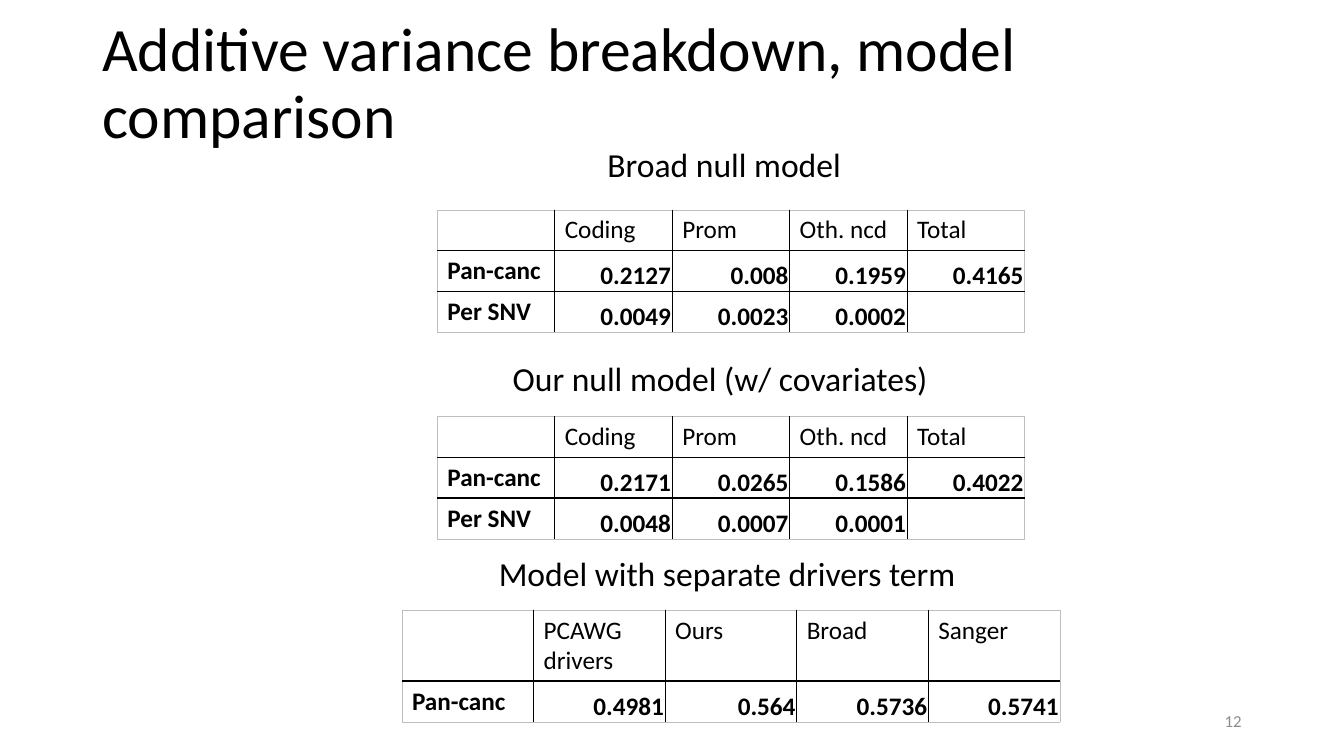
from pptx import Presentation
from pptx.dml.color import RGBColor
from pptx.enum.text import MSO_ANCHOR, PP_ALIGN
from pptx.oxml.ns import qn
from pptx.util import Cm, Pt
from lxml.etree import SubElement

BLACK = RGBColor(0, 0, 0)
WHITE = RGBColor(255, 255, 255)
GREY = RGBColor(0x8C, 0x8C, 0x8C)
EDGE = RGBColor(0xBF, 0xBF, 0xBF)
FONT = "Calibri"

HEAD = ["", "Coding", "Prom", "Oth. ncd", "Total"]
BROAD = [
    HEAD,
    ["Pan-canc", "0.2127", "0.008", "0.1959", "0.4165"],
    ["Per SNV", "0.0049", "0.0023", "0.0002", ""],
]
OURS = [
    HEAD,
    ["Pan-canc", "0.2171", "0.0265", "0.1586", "0.4022"],
    ["Per SNV", "0.0048", "0.0007", "0.0001", ""],
]
DRIVERS = [
    ["", "PCAWG drivers", "Ours", "Broad", "Sanger"],
    ["Pan-canc", "0.4981", "0.564", "0.5736", "0.5741"],
]
ROW = 1.03
TALL = 1.79


def add_run(para, text, size, color=BLACK, bold=False):
    run = para.add_run()
    run.text = text
    font = run.font
    font.name, font.size, font.bold = FONT, Pt(size), bold
    font.color.rgb = color


def add_text(slide, box, text, size, color=BLACK, anchor=MSO_ANCHOR.TOP,
             align=PP_ALIGN.LEFT, space=1.0):
    frame = slide.shapes.add_textbox(*map(Cm, box)).text_frame
    frame.word_wrap = True
    frame.vertical_anchor = anchor
    para = frame.paragraphs[0]
    para.alignment = align
    para.line_spacing = space
    add_run(para, text, size, color)


def add_edge(cell, side, outer):
    """Draw one side of a cell: grey on the rim, black inside."""
    props = cell._tc.get_or_add_tcPr()
    line = SubElement(props, qn("a:ln" + side), w=str(Pt(0.5 if outer else 1)))
    fill = SubElement(line, qn("a:solidFill"))
    SubElement(fill, qn("a:srgbClr"), val=str(EDGE if outer else BLACK))


def add_grid(slide, box, rows, heights):
    """Place a table of equal columns in a box of left, top, width."""
    left, top, width = box
    high, wide = len(rows), len(rows[0])
    grid = slide.shapes.add_table(
        high, wide, Cm(left), Cm(top), Cm(width), Cm(sum(heights))).table
    grid.first_row = grid.horz_banding = False
    for col in grid.columns:
        col.width = Cm(width / wide)
    for r, row in enumerate(rows):
        grid.rows[r].height = Cm(heights[r])
        for c, text in enumerate(row):
            cell = grid.cell(r, c)
            rims = {"L": c == 0, "R": c == wide - 1,
                    "T": r == 0, "B": r == high - 1}
            for side, outer in rims.items():
                add_edge(cell, side, outer)
            cell.fill.solid()
            cell.fill.fore_color.rgb = WHITE
            if not text:
                continue
            para = cell.text_frame.paragraphs[0]
            if r and c:
                cell.vertical_anchor = MSO_ANCHOR.BOTTOM
                cell.margin_left = cell.margin_right = Cm(0.03)
                cell.margin_top, cell.margin_bottom = Cm(0.03), 0
                para.alignment = PP_ALIGN.RIGHT
            add_run(para, text, 18, bold=r > 0)


def add_model(slide, label, spot, box, rows, heights):
    """Place a caption at its spot and a table in its box."""
    add_text(slide, (*spot, 1.27), label, 24)
    add_grid(slide, box, rows, heights)


def main():
    deck = Presentation()
    deck.slide_width, deck.slide_height = Cm(33.87), Cm(19.05)
    slide = deck.slides.add_slide(deck.slide_layouts[6])
    add_text(slide, (2.33, 0.3, 29.21, 3.68),
             "Additive variance breakdown, model comparison", 44,
             anchor=MSO_ANCHOR.MIDDLE, space=0.9)
    add_model(slide, "Broad null model", (15.06, 3.5, 6.9),
              (11.02, 5.29, 14.8), BROAD, [ROW] * 3)
    add_model(slide, "Our null model (w/ covariates)", (12.67, 8.9, 11.7),
              (11.02, 10.49, 14.8), OURS, [ROW] * 3)
    add_model(slide, "Model with separate drivers term", (12.32, 13.82, 13.5),
              (10.13, 15.37, 16.58), DRIVERS, [TALL, ROW])
    add_text(slide, (23.92, 17.66, 7.62, 1.01), "12", 12, GREY,
             MSO_ANCHOR.MIDDLE, PP_ALIGN.RIGHT)
    deck.save("out.pptx")


if __name__ == "__main__":
    main()
